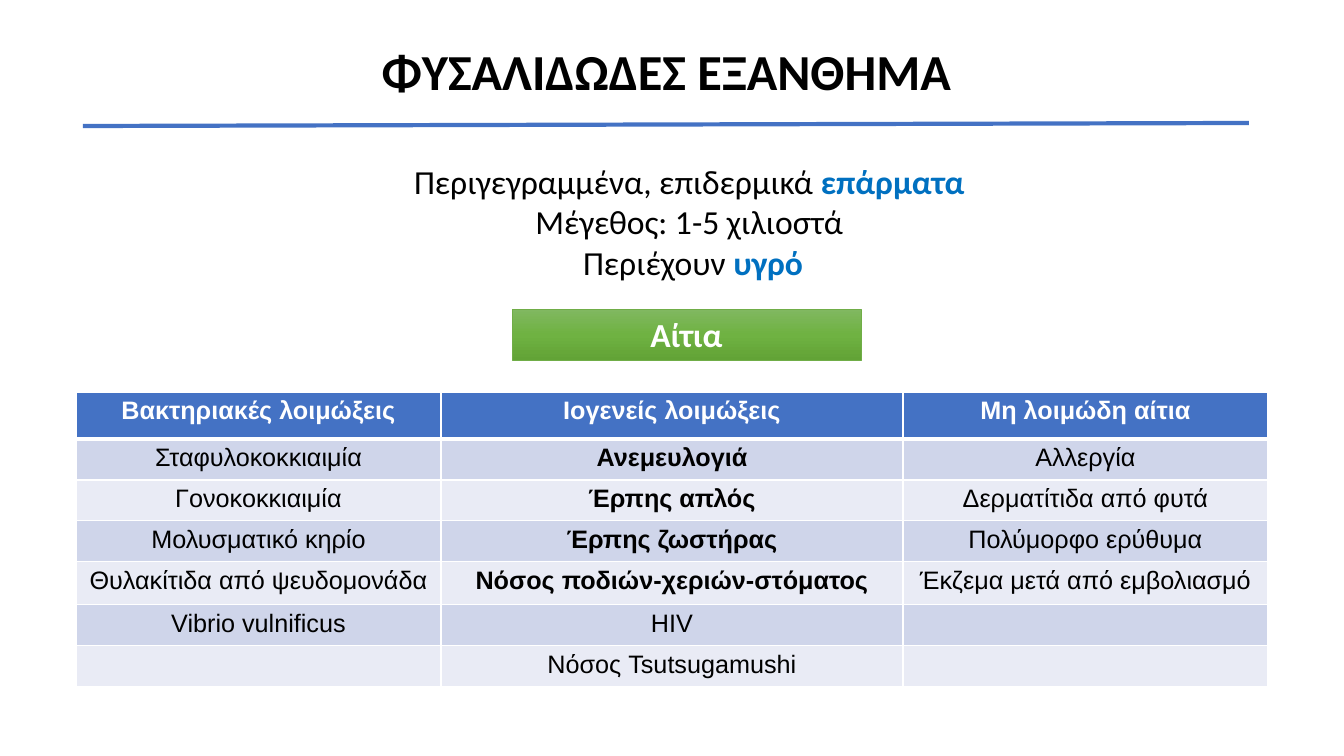
from copy import deepcopy
from dataclasses import dataclass

from lxml import etree
from pptx import Presentation
from pptx.dml.color import RGBColor
from pptx.enum.shapes import MSO_CONNECTOR, MSO_SHAPE
from pptx.enum.text import MSO_ANCHOR, PP_ALIGN
from pptx.oxml.ns import qn
from pptx.util import Pt

RECT = MSO_SHAPE.RECTANGLE
LINE = MSO_CONNECTOR.STRAIGHT
CENTER = PP_ALIGN.CENTER
MIDDLE = MSO_ANCHOR.MIDDLE
TOP = MSO_ANCHOR.TOP
SCALE = 914400 / 100.8  # EMU per px


@dataclass(frozen=True)
class Theme:
    head: str = "Calibri"
    body: str = "Arial"
    black: str = "000000"
    white: str = "FFFFFF"
    blue: str = "4472C4"
    accent: str = "0070C0"
    green: str = "70AD47"
    fade: tuple = ("81B861", "6FB242", "62A336")
    bands: tuple = ("CFD5EA", "E9EBF5")
    title: int = 36
    text: int = 24
    cell: int = 18


THEME = Theme()

FACTS = [
    [("Περιγεγραμμένα, επιδερμικά ", False), ("επάρματα ", True)],
    [("Μέγεθος: 1-5 χιλιοστά\u00a0", False)],
    [("Περιέχουν ", False), ("υγρό", True)],
]
HEADS = ["Βακτηριακές λοιμώξεις", "Ιογενείς λοιμώξεις", "Μη λοιμώδη αίτια"]
CAUSES = [
    ["Σταφυλοκοκκιαιμία", "Ανεμευλογιά", "Αλλεργία"],
    ["Γονοκοκκιαιμία", "Έρπης απλός", "Δερματίτιδα από φυτά"],
    ["Μολυσματικό κηρίο", "Έρπης ζωστήρας", "Πολύμορφο ερύθυμα"],
    ["Θυλακίτιδα από ψευδομονάδα", "Νόσος ποδιών-χεριών-στόματος",
     "Έκζεμα μετά από εμβολιασμό"],
    ["Vibrio vulnificus", "HIV", ""],
    ["", "Νόσος Tsutsugamushi", ""],
]
STRONG = range(1, 5)  # rows whose viral cause is bold
COLS = [365, 462, 365]
ROWS = [47, 41, 39, 41, 43, 41, 41]


def px(n):
    return round(n * SCALE)


def rgb(code):
    return RGBColor.from_string(code)


def write(para, text, *, size, font=THEME.head, color=THEME.black, bold=False):
    """Add one formatted run to a centred paragraph."""
    para.alignment = CENTER
    run = para.add_run()
    run.text = text
    run.font.size = Pt(size)
    run.font.name = font
    run.font.bold = bold
    run.font.color.rgb = rgb(color)


def frame(slide, box, anchor):
    area = slide.shapes.add_textbox(*map(px, box)).text_frame
    area.word_wrap = True
    area.vertical_anchor = anchor
    return area


def edge(cell, side, width):
    """Draw one white side of a table cell."""
    props = cell._tc.get_or_add_tcPr()
    line = etree.SubElement(props, qn(f"a:ln{side}"), w=str(Pt(width)))
    fill = etree.SubElement(line, qn("a:solidFill"))
    etree.SubElement(fill, qn("a:srgbClr"), val=THEME.white)


def add_title(slide, box):
    para = frame(slide, box, MIDDLE).paragraphs[0]
    para.line_spacing = 0.9
    write(para, "ΦΥΣΑΛΙΔΩΔΕΣ ΕΞΑΝΘΗΜΑ", size=THEME.title, bold=True)


def add_rule(slide, box):
    left, top, width, rise = box
    rule = slide.shapes.add_connector(
        LINE, px(left), px(top + rise), px(left + width), px(top))
    rule.line.color.rgb = rgb(THEME.blue)
    rule.line.width = Pt(3)
    etree.SubElement(rule._element.spPr, qn("a:effectLst"))


def add_facts(slide, box):
    area = frame(slide, box, TOP)
    for i, parts in enumerate(FACTS):
        para = area.add_paragraph() if i else area.paragraphs[0]
        para.level = 1
        props = para._p.get_or_add_pPr()
        props.set("marL", str(px(50)))
        props.set("indent", "0")
        for text, key in parts:
            write(para, text, size=THEME.text, bold=key,
                  color=THEME.accent if key else THEME.black)


def add_label(slide, box):
    label = slide.shapes.add_shape(RECT, *map(px, box))
    label.shadow.inherit = False
    label.line.color.rgb = rgb(THEME.green)
    label.line.width = Pt(0.5)
    # Three-stop fade from top to bottom
    label.fill.gradient()
    label.fill.gradient_angle = 270
    stops = label._element.spPr.find(f".//{qn('a:gsLst')}")
    stops.append(deepcopy(stops[-1]))
    for i, stop in enumerate(label.fill.gradient_stops):
        stop.position = i / 2
        stop.color.rgb = rgb(THEME.fade[i])
    area = label.text_frame
    area.vertical_anchor = MIDDLE
    write(area.paragraphs[0], "Αίτια", size=THEME.text,
          color=THEME.white, bold=True)


def add_causes(slide, box):
    grid = slide.shapes.add_table(len(ROWS), len(COLS), *map(px, box)).table
    grid.first_row = grid.horz_banding = False
    for col, width in zip(grid.columns, COLS):
        col.width = px(width)
    for row, height in zip(grid.rows, ROWS):
        row.height = px(height)
    for r, texts in enumerate([HEADS, *CAUSES]):
        for c, text in enumerate(texts):
            cell = grid.cell(r, c)
            for side in "LRTB":
                thick = (r, side) in ((0, "B"), (1, "T"))
                edge(cell, side, 3 if thick else 1)
            cell.fill.solid()
            cell.fill.fore_color.rgb = rgb(
                THEME.bands[(r - 1) % 2] if r else THEME.blue)
            if text:
                write(cell.text_frame.paragraphs[0], text,
                      size=THEME.cell, font=THEME.body,
                      color=THEME.black if r else THEME.white,
                      bold=r == 0 or (c == 1 and r in STRONG))


def main():
    deck = Presentation()
    deck.slide_width, deck.slide_height = px(1344), px(756)
    slide = deck.slides.add_slide(deck.slide_layouts[6])
    add_title(slide, (87, 1, 1159, 146))
    add_causes(slide, (76, 392, sum(COLS), sum(ROWS)))
    add_label(slide, (512, 309, 349, 51))
    add_facts(slide, (85, 156, 1166, 132))
    add_rule(slide, (83, 123, 1166, 3))
    deck.save("out.pptx")


if __name__ == "__main__":
    main()
